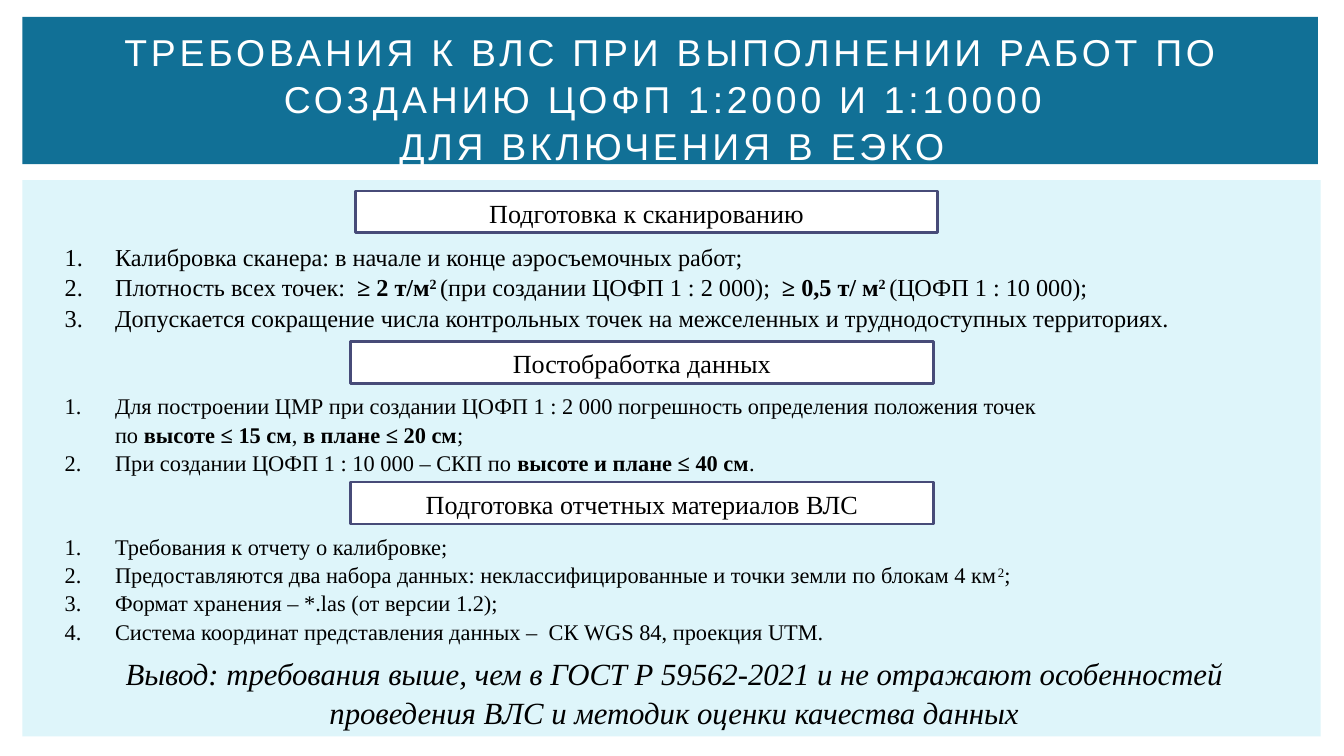
from dataclasses import dataclass

from lxml import etree
from pptx import Presentation
from pptx.dml.color import RGBColor
from pptx.enum import shapes, text
from pptx.oxml import ns
from pptx.util import Pt


@dataclass(frozen=True)
class Theme:
    sans: str = "Arial"
    serif: str = "Times New Roman"
    white: str = "FFFFFF"
    ink: str = "000000"
    teal: str = "117096"
    pale: str = "DEF5FA"
    edge: str = "474B78"
    head: float = 20
    end: float = 16.5
    label: float = 14
    large: float = 13
    small: float = 12


T = Theme()
BOLD, SUPER = {"bold": True}, {"base": 30}
BOTH = BOLD | SUPER


def place(item, box):
    item.left, item.top, item.width, item.height = map(Pt, box)


def number(para, start):
    props = para._p.get_or_add_pPr()
    tag = "a:buAutoNum" if start else "a:buNone"
    mark = etree.SubElement(props, ns.qn(tag))
    if start:
        mark.set("type", "arabicPeriod")
        if start > 1:
            mark.set("startAt", str(start))


def style(run, size, font, color, italic=False, bold=False, base=0, track=0):
    face = run.font
    face.size, face.name = Pt(size), font
    face.bold, face.italic = bold, italic
    face.color.rgb = RGBColor.from_string(color)
    props = run._r.get_or_add_rPr()
    if base:
        props.set("baseline", str(base * 1000))
    if track:
        props.set("spc", str(track * 100))


def write(item, lines, size, font=T.serif, color=T.ink, align="LEFT",
          anchor="TOP", hang=0, starts=None, **extra):
    frame = item.text_frame
    frame.word_wrap = True
    frame.auto_size = text.MSO_AUTO_SIZE.NONE
    frame.vertical_anchor = getattr(text.MSO_ANCHOR, anchor)
    frame.margin_left = frame.margin_right = Pt(7.2)
    frame.margin_top = frame.margin_bottom = Pt(3.6)
    starts = starts or [0] * len(lines)
    for i, (line, start) in enumerate(zip(lines, starts)):
        para = frame.paragraphs[0] if i == 0 else frame.add_paragraph()
        para.alignment = getattr(text.PP_ALIGN, align)
        para.line_spacing = 1.05
        para.space_before = para.space_after = Pt(0)
        props = para._p.get_or_add_pPr()
        props.set("marL", str(Pt(hang)))
        props.set("indent", str(Pt(-hang if start else 0)))
        number(para, start)
        for part in [line] if isinstance(line, str) else line:
            words, look = (part, {}) if isinstance(part, str) else part
            for j, piece in enumerate(words.split("\n")):
                if j:
                    para.add_line_break()
                run = para.add_run()
                run.text = piece
                style(run, size, font, color, **(extra | look))


def block(slide, box, fill, line=None):
    rect = slide.shapes.add_shape(shapes.MSO_SHAPE.RECTANGLE, *map(Pt, box))
    rect.shadow.inherit = False
    rect.fill.solid()
    rect.fill.fore_color.rgb = RGBColor.from_string(fill)
    if line:
        rect.line.color.rgb = RGBColor.from_string(line)
        rect.line.width = Pt(1.5)
    else:
        rect.line.fill.background()
    return rect


def back(slide, rect):
    slide.shapes._spTree.insert(2, rect._element)


def header(slide, box, words):
    x, y, w, h = box
    back(slide, block(slide, box, T.teal))
    title = slide.shapes.title
    place(title, (x + 18, y + 12, w - 34, h - 17))
    write(title, [words], T.head, font=T.sans, color=T.white,
          align="CENTER", anchor="MIDDLE", track=2)


def section(slide, body, box, label, shift, lines, size, starts):
    x, y, w, h = box
    tag = block(slide, (x + 160.5 + shift, y, 312, 22.5), T.white, T.edge)
    write(tag, [label], T.label, align="CENTER", anchor="MIDDLE")
    place(body, (x, y + 23, w, h - 23))
    write(body, lines, size, hang=27, starts=starts)


def ending(body, box, lines):
    place(body, box)
    write(body, lines, T.end, align="CENTER", italic=True)


SECTIONS = [
    (102.3, 78, "Подготовка к сканированию", 2.5, T.large, [1, 1, 1], [
        "Калибровка сканера: в начале и конце аэросъемочных работ;",
        ["Плотность всех точек:  ", ("≥ 2 т/м", BOLD), ("2 ", BOTH),
         "(при создании ЦОФП 1 : 2 000);  ", ("≥ 0,5 т/ м", BOLD),
         ("2 ", BOTH), "(ЦОФП 1 : 10 000);"],
        "Допускается сокращение числа контрольных точек на межселенных "
        "и труднодоступных территориях.",
    ]),
    (183, 74, "Постобработка данных", 0, T.small, [1, 0, 2], [
        "Для построении ЦМР при создании ЦОФП 1 : 2 000 погрешность "
        "определения положения точек",
        ["по ", ("высоте ≤ 15 см", BOLD), ", ",
         ("в плане ≤ 20 см", BOLD), ";"],
        ["При создании ЦОФП 1 : 10 000 – СКП по ",
         ("высоте и плане ≤ 40 см", BOLD), "."],
    ]),
    (258.3, 88, "Подготовка отчетных материалов ВЛС", 0, T.small, [1] * 4, [
        "Требования к отчету о калибровке;",
        ["Предоставляются два набора данных: неклассифицированные и точки "
         "земли по блокам 4 км", ("2", SUPER), ";"],
        "Формат хранения – *.las (от версии 1.2);",
        "Система координат представления данных –  СК WGS 84, проекция UTM.",
    ]),
]


def main():
    deck = Presentation()
    deck.slide_width, deck.slide_height = Pt(720), Pt(405)
    slide = deck.slides.add_slide(deck.slide_layouts.get_by_name("Comparison"))
    *bodies, last = list(slide.placeholders)[1:]
    header(slide, (12, 9, 694, 79),
           "ТРЕБОВАНИЯ К ВЛС ПРИ ВЫПОЛНЕНИИ РАБОТ ПО СОЗДАНИЮ "
           "ЦОФП 1:2000 И 1:10000 \nДЛЯ ВКЛЮЧЕНИЯ В ЕЭКО")
    back(slide, block(slide, (12, 96.5, 695.5, 298), T.pale))
    for body, (y, h, label, shift, size, starts, lines) in zip(bodies, SECTIONS):
        section(slide, body, (27.4, y, 680, h), label, shift, lines, size, starts)
    ending(last, (14.4, 346.3, 697.7, 47.5), [
        "Вывод: требования выше, чем в ГОСТ Р 59562-2021 "
        "и не отражают особенностей ",
        "проведения ВЛС и методик оценки качества данных ",
    ])
    deck.save("out.pptx")


if __name__ == "__main__":
    main()
